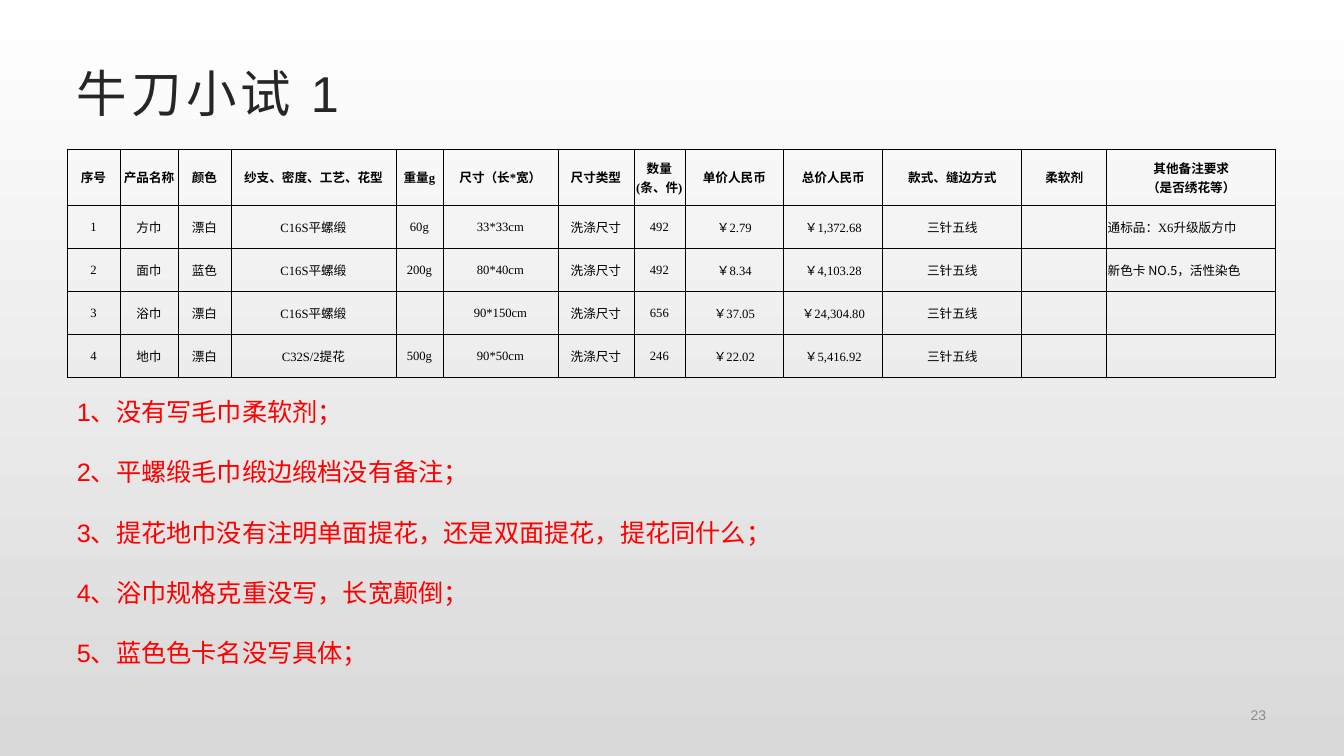
from lxml import etree
from pptx import Presentation
from pptx.dml.color import RGBColor
from pptx.enum.text import MSO_ANCHOR, PP_ALIGN
from pptx.oxml.ns import qn
from pptx.util import Emu, Pt

PX = 914400 / 100.8
LEFT, CENTER, RIGHT = PP_ALIGN.LEFT, PP_ALIGN.CENTER, PP_ALIGN.RIGHT
TOP, MIDDLE = MSO_ANCHOR.TOP, MSO_ANCHOR.MIDDLE

BLACK = RGBColor(0x00, 0x00, 0x00)
WHITE = RGBColor(0xFF, 0xFF, 0xFF)
SILVER = RGBColor(0xD9, 0xD9, 0xD9)
CHARCOAL = RGBColor(0x26, 0x26, 0x26)
GREY = RGBColor(0x8C, 0x8C, 0x8C)
RED = RGBColor(0xFF, 0x00, 0x00)

SANS, SERIF, CJK = "Arial", "Times New Roman", "Noto Sans CJK SC"

COLUMN_WIDTHS = [53, 58, 53, 165, 47, 115, 76, 51, 99, 99, 139, 85, 169]
ROW_HEIGHTS = [56, 43, 43, 43, 43]
HEADINGS = [
    "序号", "产品名称", "颜色", "纱支、密度、工艺、花型", "重量g", "尺寸（长*宽）", "尺寸类型",
    "数量\v(条、件)", "单价人民币", "总价人民币", "款式、缝边方式", "柔软剂",
    "其他备注要求\v（是否绣花等）",
]
SIZE_TYPE, SEAM = "洗涤尺寸", "三针五线"
PRODUCTS = [
    ["1", "方巾", "漂白", "C16S平螺缎", "60g", "33*33cm", SIZE_TYPE, "492",
     "￥2.79", "￥1,372.68", SEAM, "", "通标品：X6升级版方巾"],
    ["2", "面巾", "蓝色", "C16S平螺缎", "200g", "80*40cm", SIZE_TYPE, "492",
     "￥8.34", "￥4,103.28", SEAM, "", "新色卡 NO.5，活性染色"],
    ["3", "浴巾", "漂白", "C16S平螺缎", "", "90*150cm", SIZE_TYPE, "656",
     "￥37.05", "￥24,304.80", SEAM, "", ""],
    ["4", "地巾", "漂白", "C32S/2提花", "500g", "90*50cm", SIZE_TYPE, "246",
     "￥22.02", "￥5,416.92", SEAM, "", ""],
]
MISTAKES = [
    "1、没有写毛巾柔软剂；",
    "2、平螺缎毛巾缎边缎档没有备注；",
    "3、提花地巾没有注明单面提花，还是双面提花，提花同什么；",
    "4、浴巾规格克重没写，长宽颠倒；",
    "5、蓝色色卡名没写具体；",
]


def px(length):
    """Turn a length in px into EMU."""
    return Emu(round(length * PX))


class OrderSlide:
    """Hold the style and the slide being built."""

    def __init__(self, deck):
        """Add a title-only slide with a vertical gradient behind it."""
        self.slide = deck.slides.add_slide(deck.slide_layouts[5])
        fill = self.slide.background.fill
        fill.gradient()
        fill.gradient_angle = 270
        for stop, color in zip(fill.gradient_stops, (WHITE, SILVER)):
            stop.color.rgb = color

    def style(self, frame, size, color, align=LEFT, font=SANS, bold=False, spacing=0):
        """Format every paragraph and run of a text frame."""
        for paragraph in frame.paragraphs:
            paragraph.alignment = align
            for run in paragraph.runs:
                run.font.size = Pt(size)
                run.font.bold = bold
                run.font.name = font
                run.font.color.rgb = color
                properties = run._r.get_or_add_rPr()
                properties.set("spc", str(spacing * 100))
                east_asian = etree.Element(qn("a:ea"), typeface=CJK)
                properties.find(qn("a:latin")).addnext(east_asian)

    def title(self, text, left, top, width, height):
        """Place and format the title placeholder."""
        heading = self.slide.shapes.title
        heading.left, heading.top = px(left), px(top)
        heading.width, heading.height = px(width), px(height)
        frame = heading.text_frame
        frame.text = text
        frame.vertical_anchor = MIDDLE
        frame.margin_left = frame.margin_right = px(10)
        frame.margin_top = frame.margin_bottom = px(5)
        self.style(frame, 36, CHARCOAL, spacing=3)

    def text(self, lines, left, top, width, height, size, color, align=LEFT, anchor=TOP):
        """Add a wrapping text box and return its frame."""
        frame = self.slide.shapes.add_textbox(
            px(left), px(top), px(width), px(height)).text_frame
        frame.word_wrap = True
        frame.vertical_anchor = anchor
        frame.text = "\n".join(lines)
        self.style(frame, size, color, align)
        return frame

    def remarks(self, lines, left, top, width, height):
        """Add widely spaced lines of red remarks."""
        frame = self.text(lines, left, top, width, height, 18, RED)
        for paragraph in frame.paragraphs:
            paragraph.line_spacing = Pt(22)
            paragraph.space_after = Pt(21)

    def border(self, cell):
        """Draw a thin black line on each side of a cell."""
        properties = cell._tc.get_or_add_tcPr()
        for index, side in enumerate(("lnL", "lnR", "lnT", "lnB")):
            line = etree.Element(qn(f"a:{side}"), w=str(Pt(0.5)))
            fill = etree.SubElement(line, qn("a:solidFill"))
            etree.SubElement(fill, qn("a:srgbClr"), val=str(BLACK))
            properties.insert(index, line)

    def table(self, rows, left, top, widths, heights):
        """Add a bordered table whose first row is bold."""
        grid = self.slide.shapes.add_table(
            len(rows), len(widths), px(left), px(top),
            px(sum(widths)), px(sum(heights))).table
        grid.first_row = grid.horz_banding = False
        for column, width in zip(grid.columns, widths):
            column.width = px(width)
        for row, height in zip(grid.rows, heights):
            row.height = px(height)
        for r, values in enumerate(rows):
            for c, value in enumerate(values):
                cell = grid.cell(r, c)
                cell.fill.background()
                cell.vertical_anchor = MIDDLE
                cell.margin_left = cell.margin_right = cell.margin_top = px(1)
                cell.margin_bottom = 0
                cell.text_frame.text = value
                remark = r > 0 and c == len(widths) - 1
                font = CJK if value.startswith("新色卡") else SERIF
                self.style(cell.text_frame, 9, BLACK, LEFT if remark else CENTER,
                           font, bold=r == 0)
                self.border(cell)


def main():
    """Build the slide and save it."""
    deck = Presentation()
    deck.slide_width, deck.slide_height = px(1344), px(756)
    page = OrderSlide(deck)
    page.title("牛刀小试 1", 67, 53, 1210, 78)
    page.text(["23"], 979, 697, 297, 35, 10, GREY, RIGHT, MIDDLE)
    page.remarks(MISTAKES, 67, 391, 855, 318)
    page.table([HEADINGS] + PRODUCTS, 67, 149, COLUMN_WIDTHS, ROW_HEIGHTS)
    deck.save("out.pptx")


if __name__ == "__main__":
    main()
